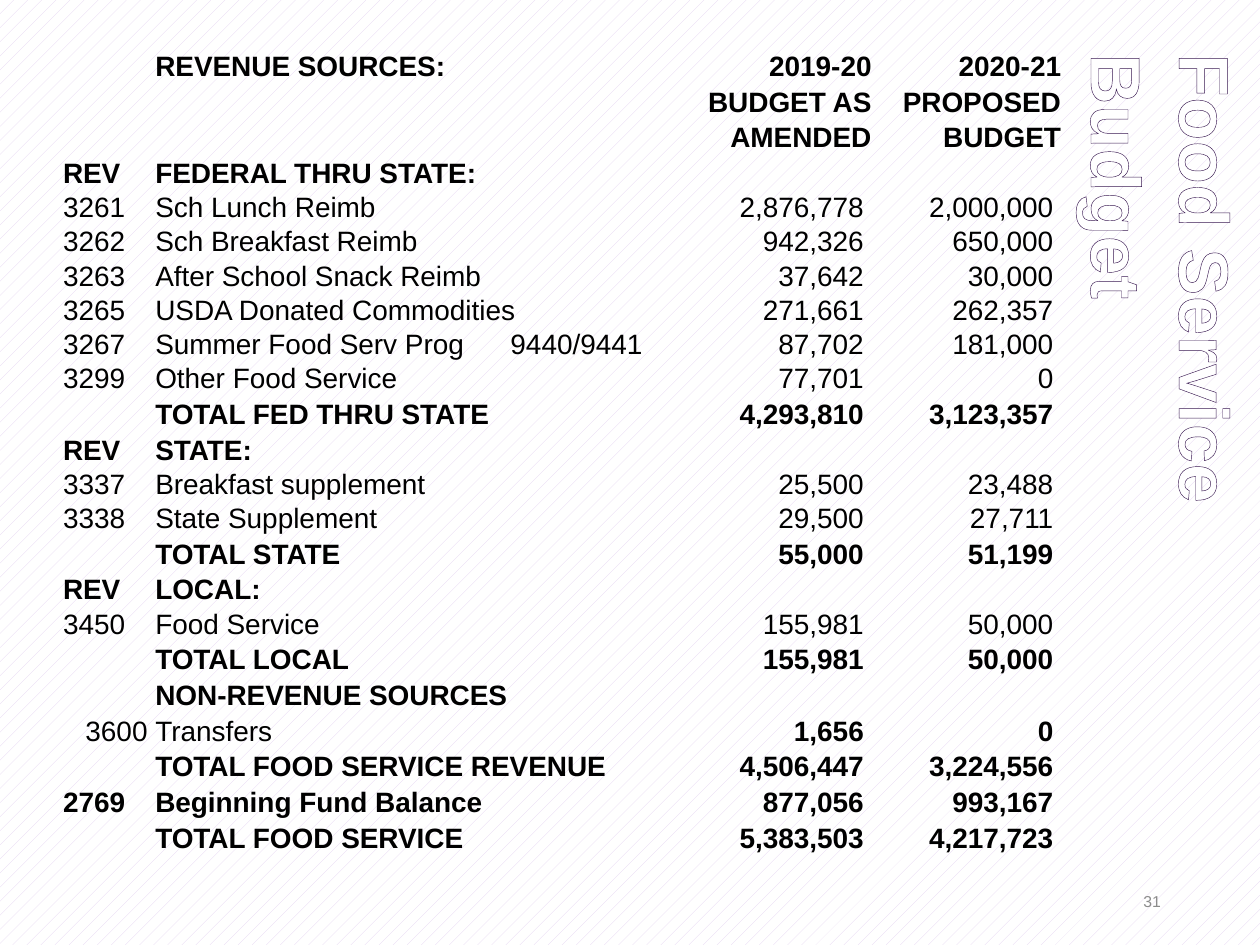
"""Build the food service budget slide with its revenue table."""
import pptx
import pptx.dml.color
import pptx.enum.dml
import pptx.enum.text
import pptx.oxml
import pptx.oxml.ns
import pptx.util
from pptx.util import Cm

COLORS = {"text": "000000", "title": "FFFFFF", "outline": "381850",
          "number": "8C8C8C", "hatch": "E3D1F1", "paper": "FFFFFF"}
ANCHOR = pptx.enum.text.MSO_ANCHOR
RIGHT = pptx.enum.text.PP_ALIGN.RIGHT
NO_STYLE = "{2D5ABB26-0587-4C30-8999-92F81FD0307C}"
COL_WIDTHS = (1.86, 10.62, 3.82, 3.82)
ROW_HEIGHTS = {"bold": 0.72, "item": 0.69, "transfer": 0.72}
BOLD_COLS = {"bold": (0, 1, 2, 3), "item": (), "transfer": (2, 3)}
RIGHT_COLS = {"bold": (2, 3), "item": (2, 3), "transfer": (0, 2, 3)}
ROWS = [
    ("bold", "", "REVENUE SOURCES:", "2019-20", "2020-21"),
    ("bold", "", "", "BUDGET AS", "PROPOSED"),
    ("bold", "", "", "AMENDED", "BUDGET"),
    ("bold", "REV", "FEDERAL THRU STATE:", "", ""),
    ("item", "3261", "Sch Lunch Reimb", 2876778, 2000000),
    ("item", "3262", "Sch Breakfast Reimb", 942326, 650000),
    ("item", "3263", "After School Snack Reimb", 37642, 30000),
    ("item", "3265", "USDA Donated Commodities", 271661, 262357),
    ("item", "3267", "Summer Food Serv Prog\t9440/9441", 87702, 181000),
    ("item", "3299", "Other Food Service", 77701, 0),
    ("bold", "", "TOTAL FED THRU STATE", 4293810, 3123357),
    ("bold", "REV", "STATE:", "", ""),
    ("item", "3337", "Breakfast supplement", 25500, 23488),
    ("item", "3338", "State Supplement", 29500, 27711),
    ("bold", "", "TOTAL STATE", 55000, 51199),
    ("bold", "REV", "LOCAL:", "", ""),
    ("item", "3450", "Food Service", 155981, 50000),
    ("bold", "", "TOTAL LOCAL", 155981, 50000),
    ("bold", "", "NON-REVENUE SOURCES", "", ""),
    ("transfer", "3600 ", "Transfers", 1656, 0),
    ("bold", "", "TOTAL FOOD SERVICE REVENUE", 4506447, 3224556),
    ("bold", "2769", "Beginning Fund Balance", 877056, 993167),
    ("bold", "", "TOTAL FOOD SERVICE", 5383503, 4217723),
    ("bold", "", "", "", ""),
]


def rgb(name):
    """Return the named colour."""
    return pptx.dml.color.RGBColor.from_string(COLORS[name])


def set_attrs(obj, values):
    """Set each attribute of obj from a dict."""
    for name, value in values.items():
        setattr(obj, name, value)


def add_run(p, text, size, color, bold=False):
    """Add a formatted run to a paragraph."""
    r = p.add_run()
    r.text = text
    set_attrs(r.font, {"name": "Arial", "size": pptx.util.Pt(size), "bold": bold})
    r.font.color.rgb = rgb(color)
    return r


def add_text(slide, box, text, size, color, anchor, bold=False):
    """Add a one-paragraph text box and return its shape, paragraph and run."""
    sp = slide.shapes.add_textbox(*map(Cm, box))
    tf = sp.text_frame
    set_attrs(tf, {"word_wrap": True, "vertical_anchor": anchor})
    p = tf.paragraphs[0]
    return sp, p, add_run(p, text, size, color, bold)


def outline_run(r, color, width):
    """Outline the letters of a run and space them out."""
    rpr = r.font._element
    rpr.set("spc", "50")
    rpr.insert(0, pptx.oxml.parse_xml(
        f'<a:ln {pptx.oxml.ns.nsdecls("a")} w="{pptx.util.Pt(width)}"><a:solidFill>'
        f'<a:srgbClr val="{COLORS[color]}"/></a:solidFill></a:ln>'))


def add_tab_stop(p, position):
    """Give a paragraph one left tab stop."""
    p._p.get_or_add_pPr().append(pptx.oxml.parse_xml(
        f'<a:tabLst {pptx.oxml.ns.nsdecls("a")}>'
        f'<a:tab pos="{Cm(position)}" algn="l"/></a:tabLst>'))


def fill_cell(cell, value, bold, right):
    """Write one table cell, with amounts grouped by thousands."""
    text = f"{value:,} " if isinstance(value, int) else value
    set_attrs(cell, {"margin_left": 0, "margin_right": 0, "margin_top": 0,
                     "margin_bottom": 0, "vertical_anchor": ANCHOR.BOTTOM})
    cell.fill.background()
    p = cell.text_frame.paragraphs[0]
    if not text:
        p._p.get_or_add_endParaRPr().set("sz", "1600")
        return
    if right:
        p.alignment = RIGHT
    if "\t" in text:
        add_tab_stop(p, 7.16)
    add_run(p, text, 16, "text", bold)


def add_budget_table(slide):
    """Add the revenue table."""
    height = sum(ROW_HEIGHTS[row[0]] for row in ROWS)
    frame = slide.shapes.add_table(len(ROWS), len(COL_WIDTHS), Cm(1.27), Cm(0.94),
                                   Cm(sum(COL_WIDTHS)), Cm(height))
    table = frame.table
    set_attrs(table, {"first_row": False, "horz_banding": False})
    table._tbl.tblPr.find(pptx.oxml.ns.qn("a:tableStyleId")).text = NO_STYLE
    for column, width in zip(table.columns, COL_WIDTHS):
        column.width = Cm(width)
    for i, (kind, *values) in enumerate(ROWS):
        table.rows[i].height = Cm(ROW_HEIGHTS[kind])
        for j, value in enumerate(values):
            fill_cell(table.cell(i, j), value, j in BOLD_COLS[kind],
                      j in RIGHT_COLS[kind])


def main():
    """Build and save the slide."""
    prs = pptx.Presentation()
    set_attrs(prs, {"slide_width": Cm(25.4), "slide_height": Cm(19.05)})
    slide = prs.slides.add_slide(prs.slide_layouts[6])
    fill = slide.background.fill
    fill.patterned()
    fill.pattern = pptx.enum.dml.MSO_PATTERN.PERCENT_10
    fill.fore_color.rgb, fill.back_color.rgb = rgb("hatch"), rgb("paper")

    _, p, _ = add_text(slide, (17.93, 17.65, 5.72, 1.02), "31", 9, "number",
                       ANCHOR.MIDDLE)
    p.alignment = RIGHT
    sp, p, r = add_text(slide, (15.77, 6.65, 14.81, 3.18), "Food Service Budget",
                        40, "title", ANCHOR.BOTTOM, True)
    sp.rotation = 90
    p.line_spacing = 1.05
    outline_run(r, "outline", 1.05)
    add_budget_table(slide)
    prs.save("out.pptx")


if __name__ == "__main__":
    main()
